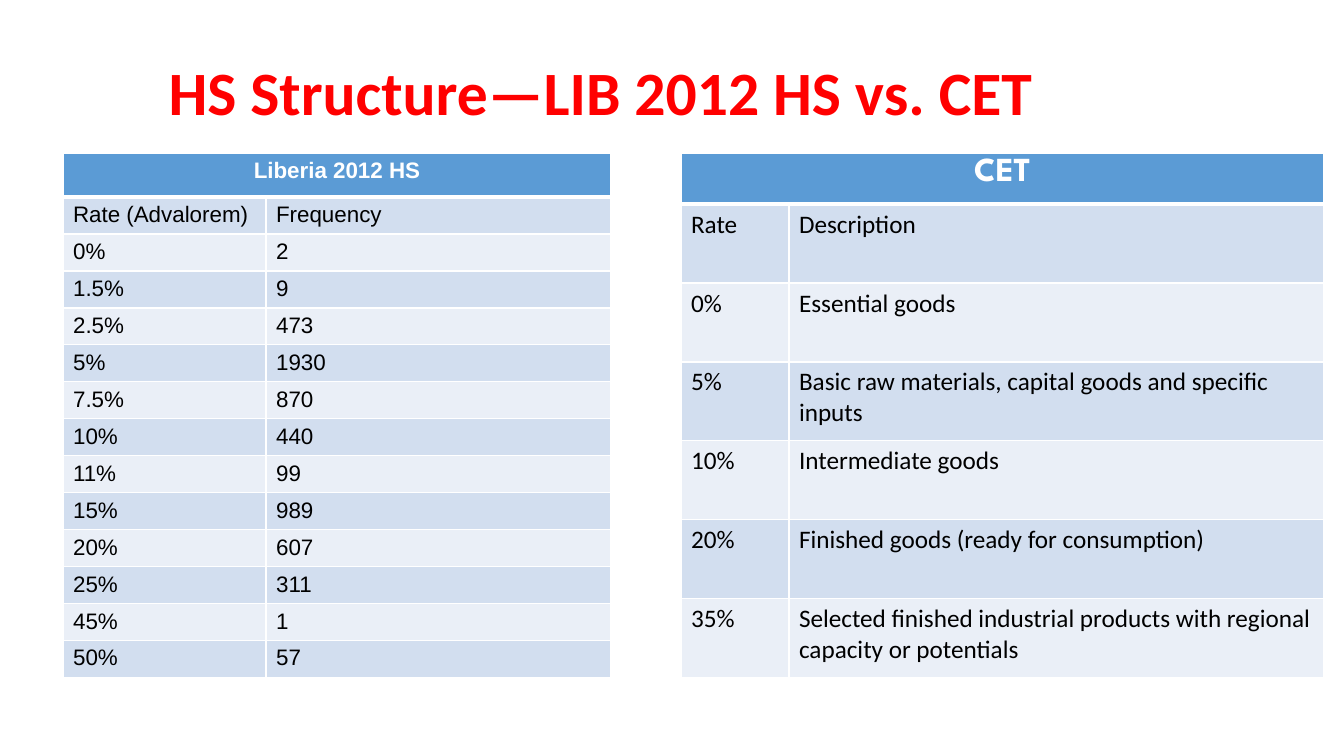
from lxml.etree import SubElement
from pptx import Presentation
from pptx.dml.color import RGBColor
from pptx.enum.text import MSO_ANCHOR, PP_ALIGN
from pptx.oxml.ns import qn
from pptx.util import Emu, Pt

COLORS = {"title": "FF0000", "header": "5B9BD5", "band_dark": "D2DEEF",
          "band_light": "EAEFF7", "white": "FFFFFF", "black": "000000"}


def px(length):
    return Emu(round(length * 12192000 / 1344))


def style_text(paragraph, font_name, size, color, bold=False, centered=False):
    paragraph.font.name = font_name
    paragraph.font.size = Pt(size)
    paragraph.font.bold = bold
    paragraph.font.color.rgb = RGBColor.from_string(COLORS[color])
    paragraph.alignment = PP_ALIGN.CENTER if centered else PP_ALIGN.LEFT


deck = Presentation()
deck.slide_width, deck.slide_height = px(1344), px(756)
slide = deck.slides.add_slide(deck.slide_layouts[6])

# Title
title = slide.shapes.add_textbox(px(34), px(56), px(1134), px(80)).text_frame
title.word_wrap = True
title.vertical_anchor = MSO_ANCHOR.MIDDLE
heading = title.paragraphs[0]
heading.text = "HS Structure—LIB 2012 HS vs. CET"
heading.line_spacing = 0.9
style_text(heading, "Calibri", 44, "title", bold=True, centered=True)

# Tariff data
liberia_rates = [
    ("Rate (Advalorem)", "Frequency"),
    ("0%", "2"), ("1.5%", "9"), ("2.5%", "473"), ("5%", "1930"),
    ("7.5%", "870"), ("10%", "440"), ("11%", "99"), ("15%", "989"),
    ("20%", "607"), ("25%", "311"), ("45%", "1"), ("50%", "57"),
]
cet_rates = [
    ("Rate", "Description"),
    ("0%", "Essential goods"),
    ("5%", "Basic raw materials, capital goods and specific inputs"),
    ("10%", "Intermediate goods"),
    ("20%", "Finished goods (ready for consumption)"),
    ("35%", "Selected finished industrial products with regional capacity or potentials"),
]

# Left, column widths, header height, row height, header font, body font, heading, rows
tariffs = [
    (63, (203, 345), 44, 36, ("Arial", 16), ("Arial", 16), "Liberia 2012 HS", liberia_rates),
    (681, (108, 535), 51, 79, ("League Spartan", 24), ("Calibri", 18), "CET", cet_rates),
]

# Tables
for left, widths, header_height, row_height, header_font, body_font, name, rates in tariffs:
    height = header_height + row_height * len(rates)
    tariff = slide.shapes.add_table(len(rates) + 1, 2, px(left), px(153),
                                    px(sum(widths)), px(height)).table
    for column, width in zip(tariff.columns, widths):
        column.width = px(width)
    tariff.cell(0, 0).merge(tariff.cell(0, 1))

    for r, values in enumerate([(name, ""), *rates]):
        is_header = r == 0
        tariff.rows[r].height = px(header_height if is_header else row_height)
        band = "header" if is_header else ("band_light", "band_dark")[r % 2]
        for c, value in enumerate(values):
            cell = tariff.cell(r, c)
            cell.text = value
            paragraph = cell.text_frame.paragraphs[0]
            if is_header:
                style_text(paragraph, *header_font, "white", bold=True, centered=True)
            else:
                style_text(paragraph, *body_font, "black")

            # White borders, thicker under the header
            properties = cell._tc.get_or_add_tcPr()
            for side in ("lnL", "lnR", "lnT", "lnB"):
                thick = (r, side) in ((0, "lnB"), (1, "lnT"))
                border = SubElement(properties, qn(f"a:{side}"), w=str(Pt(3 if thick else 1)))
                SubElement(SubElement(border, qn("a:solidFill")), qn("a:srgbClr"),
                           val=COLORS["white"])
            cell.fill.solid()
            cell.fill.fore_color.rgb = RGBColor.from_string(COLORS[band])

deck.save("out.pptx")
